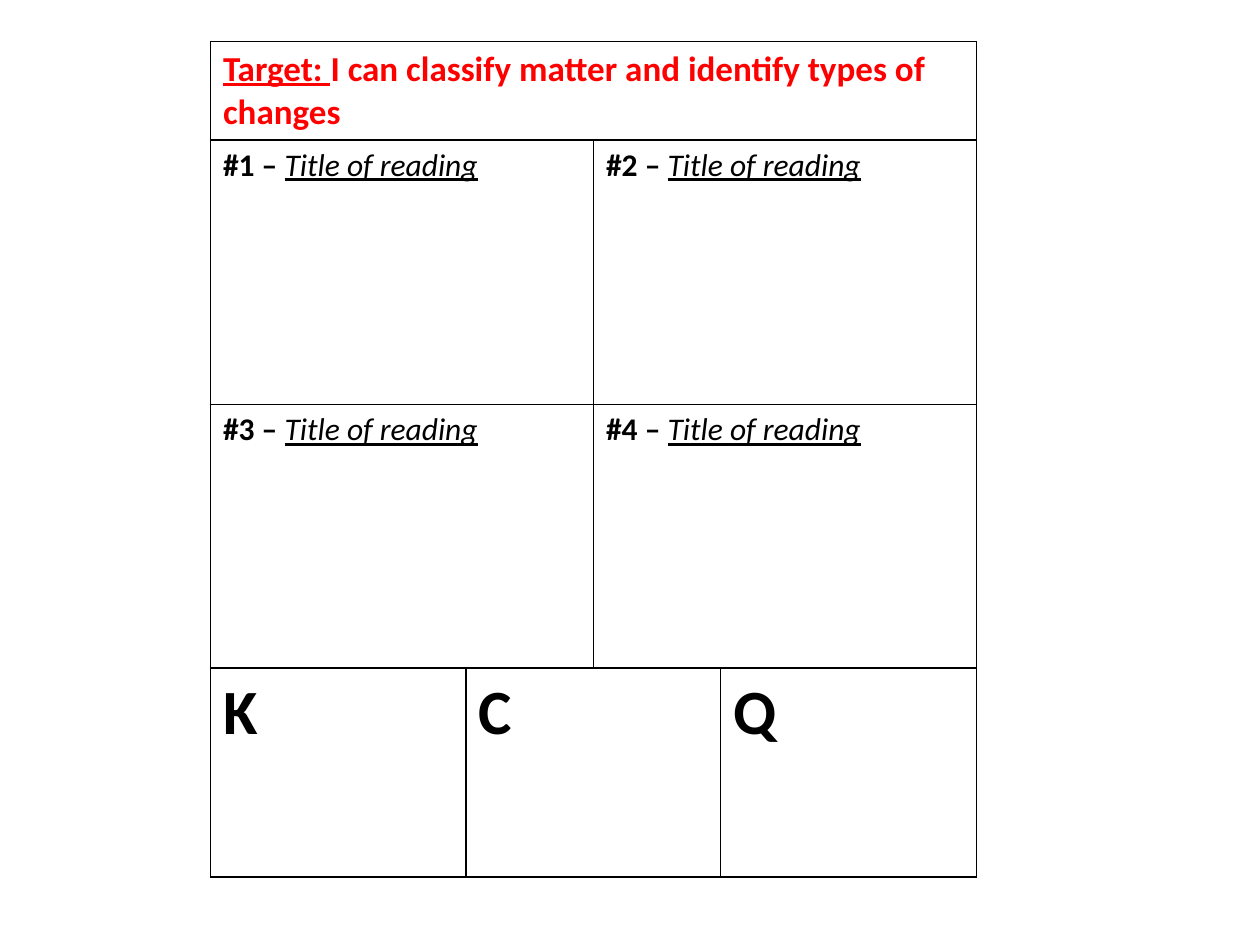
from dataclasses import dataclass

from lxml import etree
from pptx import Presentation
from pptx.dml.color import RGBColor
from pptx.oxml.ns import qn
from pptx.util import Inches, Pt


@dataclass(frozen=True)
class Theme:
    font: str = "Calibri"
    ink: str = "000000"
    target: str = "FF0000"
    target_size: int = 20
    reading_size: int = 18
    letter_size: int = 36
    border: float = 1


THEME = Theme()
COLUMN_WIDTHS = (2.03, 1.01, 1.01, 2.03)
ROW_HEIGHTS = (0.78, 2.1, 2.09, 1.66)

BOLD = {"bold": True}
BOLD_UNDERLINED = {"bold": True, "underline": True}
TITLE_STYLE = {"bold": False, "italic": True, "underline": True}


def draw_borders(cell):
    properties = cell._tc.get_or_add_tcPr()
    for position, side in enumerate(("lnL", "lnR", "lnT", "lnB")):
        line = etree.Element(qn(f"a:{side}"), w=str(Pt(THEME.border)))
        fill = etree.SubElement(line, qn("a:solidFill"))
        etree.SubElement(fill, qn("a:srgbClr"), val=THEME.ink)
        properties.insert(position, line)


def write_cell(cell, runs, size, color=THEME.ink):
    paragraph = cell.text_frame.paragraphs[0]
    for text, style in runs:
        run = paragraph.add_run()
        run.text = text
        run.font.name = THEME.font
        run.font.size = Pt(size)
        run.font.color.rgb = RGBColor.from_string(color)
        for attribute, value in style.items():
            setattr(run.font, attribute, value)


def add_organizer(slide, left, top):
    width, height = sum(COLUMN_WIDTHS), sum(ROW_HEIGHTS)
    organizer = slide.shapes.add_table(
        len(ROW_HEIGHTS), len(COLUMN_WIDTHS),
        Inches(left), Inches(top), Inches(width), Inches(height)).table
    organizer.first_row = False
    organizer.horz_banding = False
    for column, column_width in zip(organizer.columns, COLUMN_WIDTHS):
        column.width = Inches(column_width)
    for row, row_height in zip(organizer.rows, ROW_HEIGHTS):
        row.height = Inches(row_height)
    for cell in organizer.iter_cells():
        cell.fill.background()
        draw_borders(cell)

    # Learning target across the full width
    target = organizer.cell(0, 0)
    target.merge(organizer.cell(0, 3))
    write_cell(target, [
        ("Target: ", BOLD_UNDERLINED),
        ("I can classify matter and identify types of changes", BOLD),
    ], THEME.target_size, THEME.target)

    # Four readings, two to a row
    for index in range(4):
        row, column = 1 + index // 2, index % 2 * 2
        reading = organizer.cell(row, column)
        reading.merge(organizer.cell(row, column + 1))
        write_cell(reading, [
            (f"#{index + 1} – ", BOLD),
            ("Title of reading", TITLE_STYLE),
        ], THEME.reading_size)

    # K, C and Q boxes
    organizer.cell(3, 1).merge(organizer.cell(3, 2))
    for column, letter in ((0, "K"), (1, "C"), (3, "Q")):
        write_cell(organizer.cell(3, column), [(letter, BOLD)], THEME.letter_size)


def main():
    deck = Presentation()
    deck.slide_width, deck.slide_height = Inches(10), Inches(7.5)
    slide = deck.slides.add_slide(deck.slide_layouts[6])
    add_organizer(slide, left=1.67, top=0.33)
    deck.save("out.pptx")


if __name__ == "__main__":
    main()
